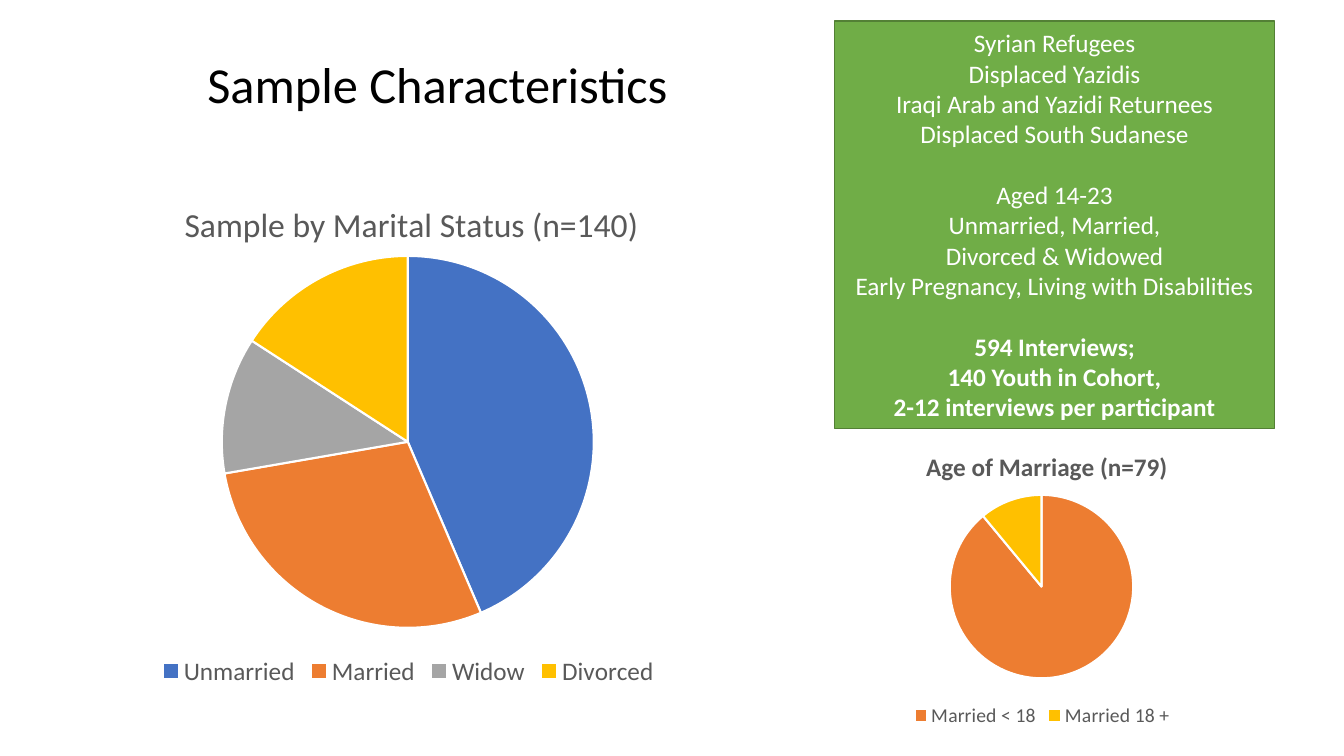
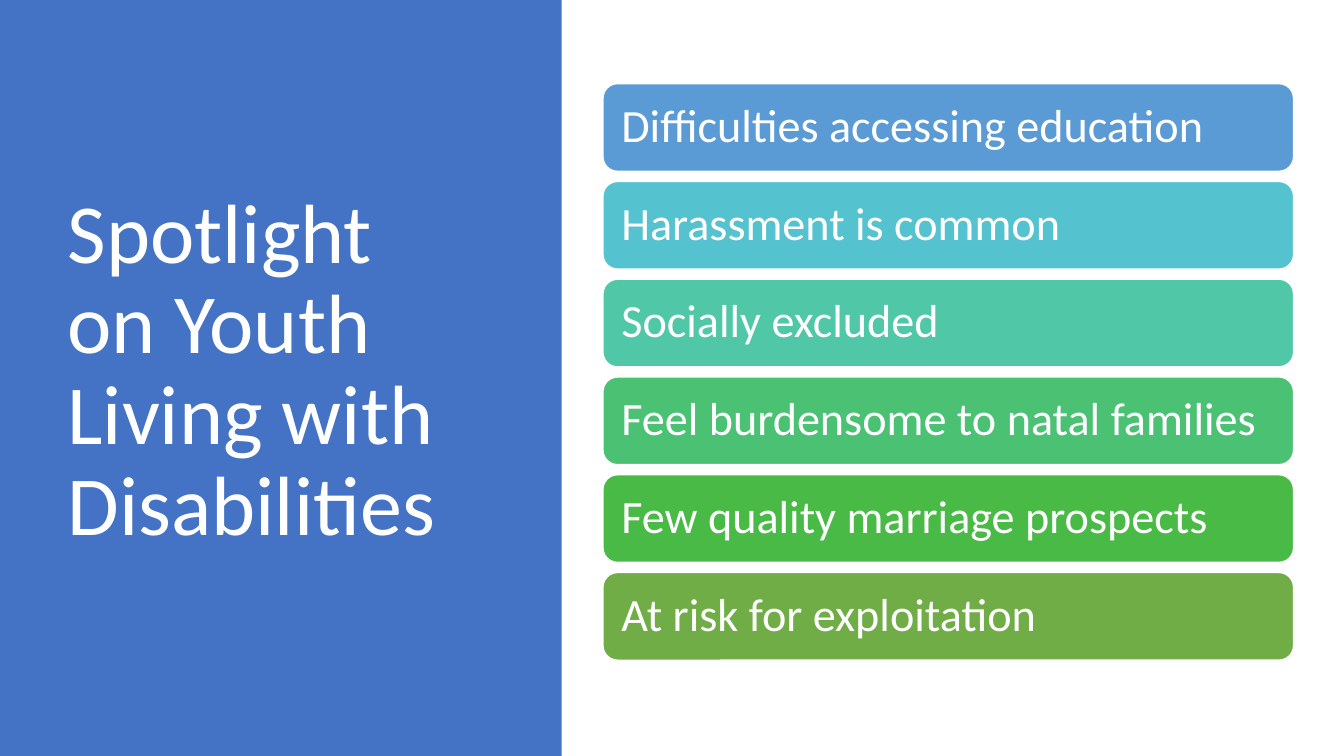
from typing import NamedTuple

from pptx import Presentation, util as u
from pptx.chart import data as chart_data
from pptx.dml.color import RGBColor
from pptx.enum import chart as chart_enum, shapes, text
from pptx.oxml import parse_xml
from pptx.oxml.ns import nsdecls, qn

PX = u.Inches(1) // 100
FONT = "Calibri"
TITLE_ONLY = 5

BLACK = RGBColor(0x00, 0x00, 0x00)
WHITE = RGBColor(0xFF, 0xFF, 0xFF)
GREY_TEXT = RGBColor(0x59, 0x59, 0x59)
BLUE = RGBColor(0x44, 0x72, 0xC4)
ORANGE = RGBColor(0xED, 0x7D, 0x31)
GREY = RGBColor(0xA5, 0xA5, 0xA5)
GOLD = RGBColor(0xFF, 0xC0, 0x00)
GREEN = RGBColor(0x70, 0xAD, 0x47)
DARK_GREEN = RGBColor(0x53, 0x80, 0x35)
SKY = RGBColor(0x5B, 0x9B, 0xD5)
CYAN = RGBColor(0x55, 0xC3, 0xCF)
TEAL = RGBColor(0x50, 0xC8, 0xA7)
MINT = RGBColor(0x4B, 0xC1, 0x74)
LEAF = RGBColor(0x4A, 0xBA, 0x46)


class Box(NamedTuple):
    """A rectangle in px."""
    left: int
    top: int
    width: int
    height: int

    def emu(self):
        return [value * PX for value in self]


class Slice(NamedTuple):
    label: str
    value: int
    color: RGBColor


class Pie(NamedTuple):
    title: str
    title_size: int
    title_bold: bool
    legend_size: int
    frame: Box
    title_at: tuple[int, int]
    circle: Box
    slices: list[Slice]


class Bar(NamedTuple):
    label: str
    color: RGBColor


PIES = [
    Pie("Sample by Marital Status (n=140)", 24, False, 18,
        Box(97, 174, 616, 512), (177, 194), Box(220, 254, 369, 369),
        [Slice("Unmarried", 44, BLUE), Slice("Married", 29, ORANGE),
         Slice("Widow", 12, GREY), Slice("Divorced", 16, GOLD)]),
    Pie("Age of Marriage (n=79)", 18, True, 14,
        Box(816, 425, 436, 301), (914, 441), Box(942, 491, 182, 182),
        [Slice("Married < 18", 89, ORANGE), Slice("Married 18 +", 11, GOLD)]),
]

# Groups of lines; the last group is bold.
SAMPLE_GROUPS = [
    ["Syrian Refugees", "Displaced Yazidis", "Iraqi Arab and Yazidi Returnees",
     "Displaced South Sudanese"],
    ["Aged 14-23", "Unmarried, Married,", "Divorced & Widowed",
     "Early Pregnancy, Living with Disabilities"],
    ["594 Interviews;", "140 Youth in Cohort,", "2-12 interviews per participant"],
]

BARS = [
    Bar("Difficulties accessing education", SKY),
    Bar("Harassment is common", CYAN),
    Bar("Socially excluded", TEAL),
    Bar("Feel burdensome to natal families", MINT),
    Bar("Few quality marriage prospects", LEAF),
    Bar("At risk for exploitation", GREEN),
]
FIRST_BAR = Box(598, 83, 685, 87)
BAR_PITCH = 97
BAR_INSET = 14


def style_font(font, size: int, color: RGBColor, bold: bool = False) -> None:
    font.name = FONT
    font.size = u.Pt(size)
    font.bold = bold
    font.color.rgb = color


def add_titled_slide(presentation, title: str, box: Box, size: int,
                     color: RGBColor, align):
    slide = presentation.slides.add_slide(presentation.slide_layouts[TITLE_ONLY])
    shape = slide.shapes.title
    shape.left, shape.top, shape.width, shape.height = box.emu()
    frame = shape.text_frame
    frame.text = title
    frame.word_wrap = True
    frame.auto_size = text.MSO_AUTO_SIZE.NONE
    frame.vertical_anchor = text.MSO_ANCHOR.MIDDLE
    paragraph = frame.paragraphs[0]
    paragraph.alignment = align
    paragraph.line_spacing = 0.9
    style_font(paragraph.font, size, color)
    return slide


def add_block(slide, preset, box: Box, fill: RGBColor,
              line: RGBColor | None = None):
    shape = slide.shapes.add_shape(preset, *box.emu())
    shape.shadow.inherit = False
    shape.fill.solid()
    shape.fill.fore_color.rgb = fill
    if line is None:
        shape.line.fill.background()
    else:
        shape.line.color.rgb = line
        shape.line.width = u.Pt(1)
    return shape


def place_in_chart(element, index: int, frame: Box, left: int, top: int,
                   size: tuple[int, int] | None = None) -> None:
    """Fix a chart part at a slide position in px, as fractions of the frame."""
    for layout in element.findall(qn("c:layout")):
        element.remove(layout)
    values = {"x": (left - frame.left) / frame.width,
              "y": (top - frame.top) / frame.height}
    if size:
        values["w"] = size[0] / frame.width
        values["h"] = size[1] / frame.height
    target = '<c:layoutTarget val="inner"/>' if size else ""
    modes = "".join(f'<c:{key}Mode val="edge"/>' for key in "xy")
    places = "".join(f'<c:{key} val="{value:.4f}"/>' for key, value in values.items())
    element.insert(index, parse_xml(
        f'<c:layout {nsdecls("c")}><c:manualLayout>{target}{modes}{places}'
        '</c:manualLayout></c:layout>'))


def add_pie(slide, pie: Pie) -> None:
    data = chart_data.CategoryChartData()
    data.categories = [part.label for part in pie.slices]
    data.add_series("Series 1", [part.value for part in pie.slices])
    chart = slide.shapes.add_chart(
        chart_enum.XL_CHART_TYPE.PIE, *pie.frame.emu(), data).chart
    style_font(chart.font, 10, BLACK)

    title = chart.chart_title
    title.text_frame.text = pie.title
    style_font(title.text_frame.paragraphs[0].font, pie.title_size, GREY_TEXT,
               pie.title_bold)
    title_element = chart._chartSpace.chart.find(qn("c:title"))
    place_in_chart(title_element, 1, pie.frame, *pie.title_at)

    chart.has_legend = True
    chart.legend.position = chart_enum.XL_LEGEND_POSITION.BOTTOM
    chart.legend.include_in_layout = False
    style_font(chart.legend.font, pie.legend_size, GREY_TEXT)

    circle = pie.circle
    place_in_chart(chart._chartSpace.chart.plotArea, 0, pie.frame, circle.left,
                   circle.top, (circle.width, circle.height))
    plot = chart.plots[0]
    plot.vary_by_categories = True
    for index, part in enumerate(pie.slices):
        point_format = plot.series[0].points[index].format
        point_format.fill.solid()
        point_format.fill.fore_color.rgb = part.color
        point_format.line.color.rgb = WHITE
        point_format.line.width = u.Pt(1.5)


def add_sample_box(slide) -> None:
    box = add_block(slide, shapes.MSO_SHAPE.RECTANGLE, Box(828, 21, 436, 404),
                    GREEN, DARK_GREEN)
    frame = box.text_frame
    frame.word_wrap = True
    frame.vertical_anchor = text.MSO_ANCHOR.MIDDLE
    lines = [line for group in SAMPLE_GROUPS for line in group]
    frame.text = "\n".join(lines)
    group_starts = [group[0] for group in SAMPLE_GROUPS[1:]]
    for line, paragraph in zip(lines, frame.paragraphs):
        paragraph.alignment = text.PP_ALIGN.CENTER
        style_font(paragraph.font, 18, WHITE, line in SAMPLE_GROUPS[-1])
        if line in group_starts:
            paragraph.space_before = u.Pt(22)


def add_bar(slide, bar: Bar, box: Box) -> None:
    shape = add_block(slide, shapes.MSO_SHAPE.ROUNDED_RECTANGLE, box, bar.color, WHITE)
    frame = shape.text_frame
    frame.text = bar.label
    frame.word_wrap = True
    frame.vertical_anchor = text.MSO_ANCHOR.MIDDLE
    frame.margin_left = frame.margin_right = BAR_INSET * PX
    frame.margin_top = frame.margin_bottom = BAR_INSET * PX
    paragraph = frame.paragraphs[0]
    paragraph.alignment = text.PP_ALIGN.LEFT
    paragraph.line_spacing = 0.9
    style_font(paragraph.font, 33, WHITE)


def add_sample_slide(presentation) -> None:
    slide = add_titled_slide(presentation, "Sample Characteristics",
                             Box(-31, 31, 930, 112), 36, BLACK,
                             text.PP_ALIGN.CENTER)
    for pie in PIES:
        add_pie(slide, pie)
    add_sample_box(slide)


def add_spotlight_slide(presentation) -> None:
    slide = add_titled_slide(presentation,
                             "Spotlight on Youth Living with Disabilities",
                             Box(57, 68, 416, 602), 60, WHITE,
                             text.PP_ALIGN.LEFT)
    panel = add_block(slide, shapes.MSO_SHAPE.RECTANGLE, Box(0, 0, 557, 750), BLUE)
    slide.shapes.title._element.addprevious(panel._element)
    for index, bar in enumerate(BARS):
        add_bar(slide, bar, FIRST_BAR._replace(top=FIRST_BAR.top + index * BAR_PITCH))


def main() -> None:
    presentation = Presentation()
    presentation.slide_width = 1333 * PX
    presentation.slide_height = 750 * PX
    add_sample_slide(presentation)
    add_spotlight_slide(presentation)
    presentation.save("out.pptx")


if __name__ == "__main__":
    main()
